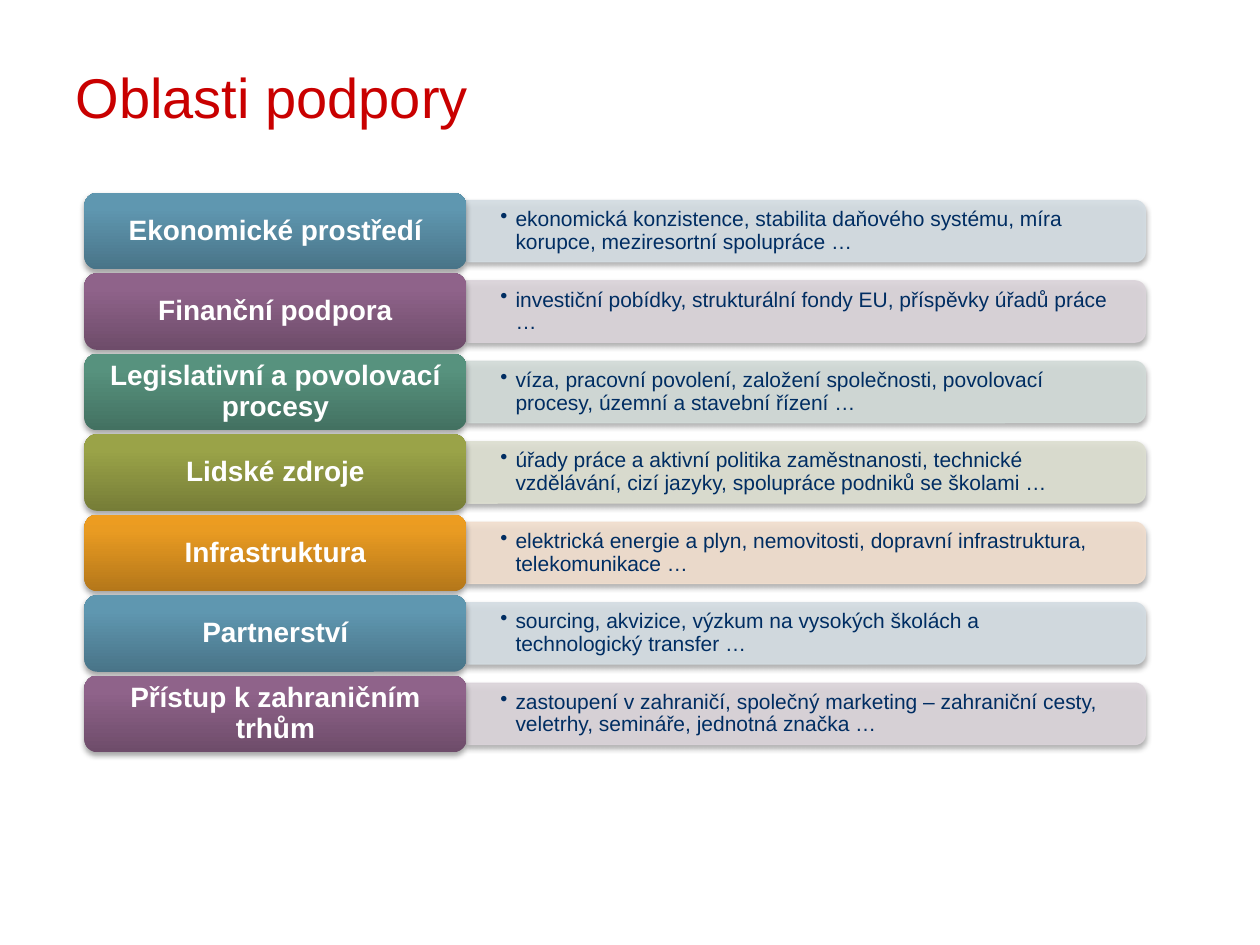
from copy import deepcopy
from itertools import cycle

from lxml import etree
from pptx import Presentation
from pptx.dml.color import RGBColor
from pptx.enum.shapes import MSO_SHAPE
from pptx.enum.text import MSO_ANCHOR, PP_ALIGN
from pptx.oxml.ns import qn
from pptx.util import Emu, Pt

ROUND_RECT = MSO_SHAPE.ROUNDED_RECTANGLE
ROUND_TOP = MSO_SHAPE.ROUND_2_SAME_RECTANGLE
MIDDLE = MSO_ANCHOR.MIDDLE
LEFT, CENTER = PP_ALIGN.LEFT, PP_ALIGN.CENTER

EMU_PER_PX = 9144
FONT = "Arial"
COLORS = {
    "title": "C90000", "detail": "002D62", "area": "FFFFFF", "shadow": "000000",
    "blue_dark": "497488", "blue_mid": "5F97B0", "blue_light": "5E98B2", "blue_pale": "D4DDE3",
    "plum_dark": "6E4C6A", "plum_mid": "8F638A", "plum_light": "90628B", "plum_pale": "DBD4DA",
    "green_dark": "437161", "green_mid": "57927E", "green_light": "56947F", "green_pale": "D2DBD8",
    "olive_dark": "767D37", "olive_mid": "9AA348", "olive_light": "9CA546", "olive_pale": "DDDFD1",
    "orange_dark": "B4771A", "orange_mid": "E99B22", "orange_light": "EE9D1F", "orange_pale": "F1DECE",
}
HUES = ("blue", "plum", "green", "olive", "orange")
AREAS = [
    ("Ekonomické prostředí",
     "ekonomická konzistence, stabilita daňového systému, míra korupce, meziresortní spolupráce …"),
    ("Finanční podpora",
     "investiční pobídky, strukturální fondy EU, příspěvky úřadů práce …"),
    ("Legislativní a povolovací procesy",
     "víza, pracovní povolení, založení společnosti, povolovací procesy, územní a stavební řízení …"),
    ("Lidské zdroje",
     "úřady práce a aktivní politika zaměstnanosti, technické vzdělávání, cizí jazyky, "
     "spolupráce podniků se školami …"),
    ("Infrastruktura",
     "elektrická energie a plyn, nemovitosti, dopravní infrastruktura, telekomunikace …"),
    ("Partnerství",
     "sourcing, akvizice, výzkum na vysokých školách a technologický transfer …"),
    ("Přístup k zahraničním trhům",
     "zastoupení v zahraničí, společný marketing – zahraniční cesty, veletrhy, semináře, "
     "jednotná značka …"),
]


def px(value):
    """Convert pixels to EMU."""
    return Emu(round(value * EMU_PER_PX))


def rgb(name):
    """Look up a named colour."""
    return RGBColor.from_string(COLORS[name])


def set_alpha(color, percent):
    """Set the opacity of an XML colour element."""
    etree.SubElement(color, qn("a:alpha"), val=str(percent * 1000))


def add_shadow(s):
    """Give a shape a soft shadow falling downwards."""
    s.shadow.inherit = False
    effects = s._element.spPr.find(qn("a:effectLst"))
    outer = etree.SubElement(effects, qn("a:outerShdw"), blurRad="40000", dist="23000",
                             dir="5400000", rotWithShape="0")
    set_alpha(etree.SubElement(outer, qn("a:srgbClr"), val=COLORS["shadow"]), 35)


def write(p, text, size, color, bold=False):
    """Add one formatted run to a paragraph."""
    r = p.add_run()
    r.text = text
    r.font.name, r.font.size, r.font.bold = FONT, Pt(size), bold
    r.font.color.rgb = rgb(color)


def prepare_frame(tf, inset_x, inset_y):
    """Set wrapping, anchor and insets, and return the first paragraph."""
    tf.word_wrap = True
    tf.vertical_anchor = MIDDLE
    tf.margin_left = tf.margin_right = px(inset_x)
    tf.margin_top = tf.margin_bottom = px(inset_y)
    p = tf.paragraphs[0]
    p.line_spacing = 0.9
    return p


def add_title(slide, x, y, w, h):
    """Fill the title placeholder."""
    sp = slide.shapes.title
    sp.left, sp.top, sp.width, sp.height = px(x), px(y), px(w), px(h)
    sp.text_frame.vertical_anchor = MIDDLE
    p = sp.text_frame.paragraphs[0]
    p.alignment = LEFT
    write(p, "Oblasti podpory", 32, "title")


def add_detail(slide, x, y, w, h, text, hue):
    """Draw a pale panel, rounded on its right, with one bullet over it."""
    s = slide.shapes.add_shape(ROUND_TOP, px(x + (w - h) / 2), px(y + (h - w) / 2), px(h), px(w))
    s.rotation = 90
    s.fill.solid()
    s.fill.fore_color.rgb = s.line.color.rgb = rgb(f"{hue}_pale")
    s.line.width = Pt(0.75)
    for color in list(s._element.spPr.iter(qn("a:srgbClr"))):
        set_alpha(color, 90)
    add_shadow(s)

    box = slide.shapes.add_textbox(px(x), px(y + 2), px(w - 2), px(h - 4))
    p = prepare_frame(box.text_frame, 27, 14)
    p.level = 1
    pPr = p._p.get_or_add_pPr()
    pPr.set("marL", str(px(12)))
    pPr.set("indent", str(px(-12)))
    etree.SubElement(pPr, qn("a:buChar"), char="•")
    write(p, text, 12, "detail")


def add_area(slide, x, y, w, h, text, hue):
    """Draw a gradient tile with the name of an area."""
    s = slide.shapes.add_shape(ROUND_RECT, px(x), px(y), px(w), px(h))
    s.fill.gradient()
    s.fill.gradient_angle = 90
    first = next(s._element.spPr.iter(qn("a:gs")))
    first.addnext(deepcopy(first))
    for stop, position, tone in zip(s.fill.gradient_stops, (0, 0.8, 1), ("dark", "mid", "light")):
        stop.position = position
        stop.color.rgb = rgb(f"{hue}_{tone}")
    s.line.fill.background()
    add_shadow(s)
    p = prepare_frame(s.text_frame, 10, 6)
    p.alignment = CENTER
    write(p, text, 16, "area", bold=True)


def add_areas(slide, x, y, w, h):
    """Stack one row per area, with gaps of a twentieth of a tile."""
    tile_h = h / (len(AREAS) + 0.05 * (len(AREAS) - 1))
    tile_w = w * 0.36
    panel_h = tile_h * 0.8
    for i, ((area, detail), hue) in enumerate(zip(AREAS, cycle(HUES))):
        top = y + i * tile_h * 1.05
        add_detail(slide, x + tile_w, top + (tile_h - panel_h) / 2, w - tile_w, panel_h, detail, hue)
        add_area(slide, x, top, tile_w, tile_h, area, hue)


def main():
    """Build the slide and save it."""
    prs = Presentation()
    prs.slide_width, prs.slide_height = px(1000), px(750)
    slide = prs.slides.add_slide(prs.slide_layouts[5])
    add_title(slide, 50, 30, 899, 93)
    add_areas(slide, 67, 153, 842, 444)
    prs.save("out.pptx")


if __name__ == "__main__":
    main()
